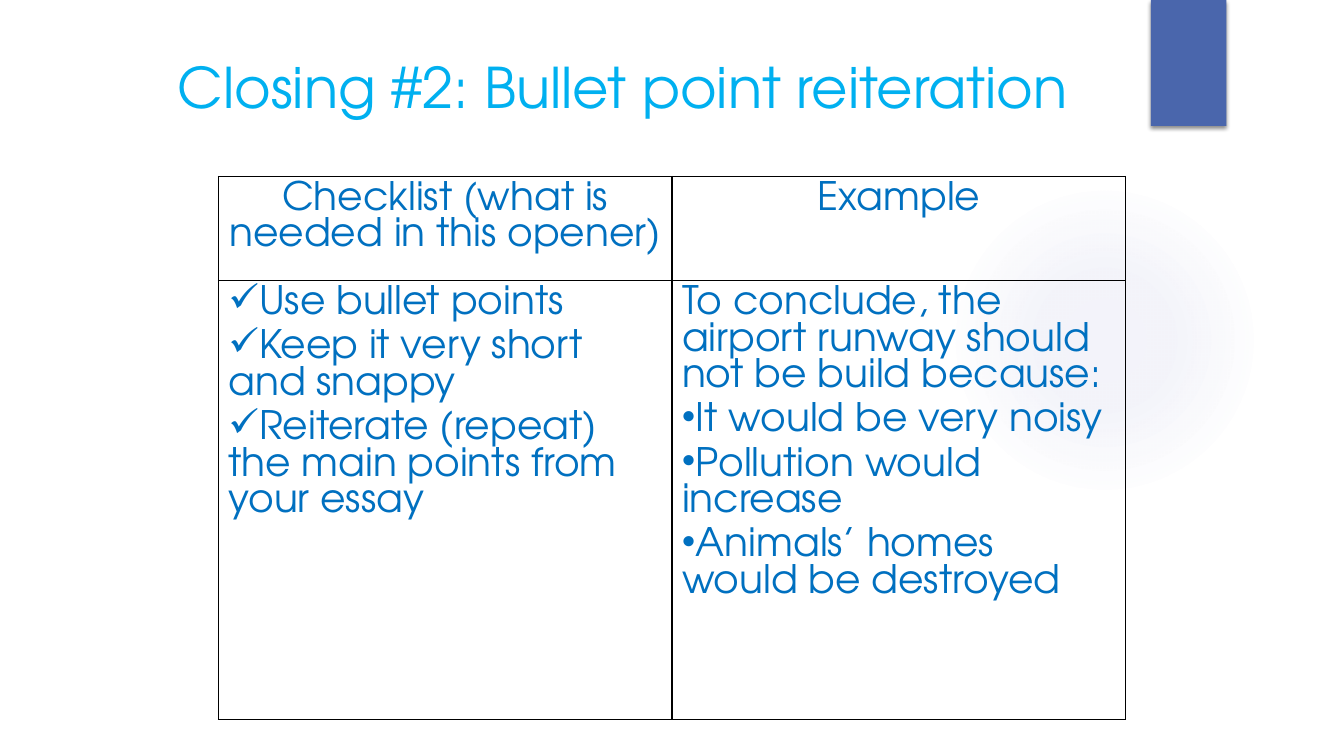
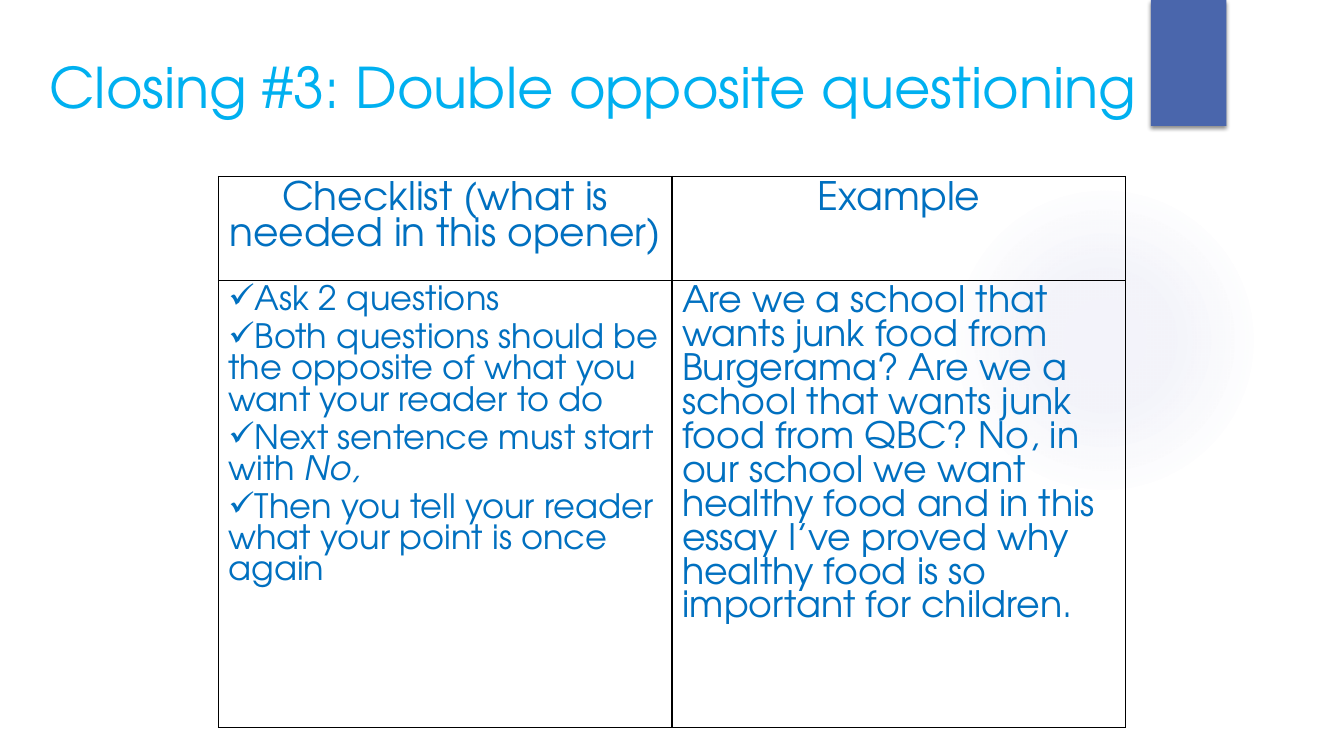
from dataclasses import dataclass
from typing import Any

from lxml import etree
from pptx import Presentation
from pptx.dml.color import RGBColor
from pptx.enum.shapes import MSO_SHAPE as Preset
from pptx.enum.text import MSO_ANCHOR as Anchor, PP_ALIGN as Align
from pptx.oxml import parse_xml
from pptx.oxml.ns import nsdecls, qn
from pptx.util import Emu, Inches, Pt

# Grid: 160 columns by 90 rows, one twelfth of an inch each
COLUMNS, ROWS = 160, 90
UNIT = Inches(1) / 12

# Shared look
FONT = "TeX Gyre Adventor"
SKY = RGBColor(0x00, 0xB0, 0xF0)
BLUE = RGBColor(0x00, 0x70, 0xC0)
TAB = RGBColor(0x4A, 0x66, 0xAC)
GLOW = RGBColor(0x5C, 0x64, 0xB7)
BLACK = RGBColor(0x00, 0x00, 0x00)
GLOW_STOPS = ((0, 7), (36, 6), (69, 0))  # position and opacity, per cent
TITLE_SIZE, TABLE_SIZE = 40, 28
TITLE_TOP, TITLE_HEIGHT, TITLE_INSET = 3.6, 15, 2.6
TABLE_LEFT, TABLE_TOP = 26, 21
TABLE_COLUMN, HEADER_ROW = 54, 12.4
HEADERS = ("Checklist (what is needed in this opener)", "Example")
CHECK, DOT = "✓", "•"


@dataclass(frozen=True)
class Item:
    text: str
    bullet: str = ""
    emphasis: str = ""
    size: int = TABLE_SIZE
    align: Align = Align.LEFT


@dataclass(frozen=True)
class Closing:
    title: str
    title_left: float
    title_width: float
    body_row: float
    checklist: tuple[Item, ...]
    example: tuple[Item, ...]


CLOSINGS = (
    Closing(
        "Closing #2: Bullet point reiteration", 20, 120, 52.2,
        (
            Item("Use bullet points", CHECK),
            Item("Keep it very short and snappy", CHECK),
            Item("Reiterate (repeat) the main points from your essay", CHECK),
        ),
        (
            Item("To conclude, the airport runway should not be build because:"),
            Item("It would be very noisy", DOT),
            Item("Pollution would increase", DOT),
            Item("Animals’ homes would be destroyed", DOT),
        ),
    ),
    Closing(
        "Closing #3: Double opposite questioning", 4.7, 133, 53.2,
        (
            Item("Ask 2 questions", CHECK, size=24),
            Item("Both questions should be the opposite of what you want "
                 "your reader to do", CHECK, size=24),
            Item("Next sentence must start with ", CHECK, "No,", 24),
            Item("Then you tell your reader what your point is once again",
                 CHECK, size=24),
        ),
        (
            Item("Are we a school that wants junk food from Burgerama? "
                 "Are we a school that wants junk food from QBC? No, in our "
                 "school we want healthy food and in this essay I’ve proved "
                 "why healthy food is so important for children.", size=26),
        ),
    ),
)


def grid(*units: float) -> list[Emu]:
    return [Emu(round(unit * UNIT)) for unit in units]


def set_format(target: Any, values: dict[str, Any]) -> None:
    for name, value in values.items():
        setattr(target, name, value)


def add_span(para: Any, text: str, size: int, color: RGBColor,
             italic: bool = False) -> None:
    span = para.add_run()
    span.text = text
    set_format(span.font, {"name": FONT, "size": Pt(size), "italic": italic})
    span.font.color.rgb = color


# Decoration behind every slide
def add_plain_shape(page: Any, preset: Preset, *place: float) -> Any:
    shape = page.shapes.add_shape(preset, *grid(*place))
    shape.shadow.inherit = False
    shape.line.fill.background()
    return shape


def add_decoration(page: Any) -> None:
    glow = add_plain_shape(page, Preset.OVAL, 113, 22, 37, 37)
    stops = "".join(
        f'<a:gs pos="{position * 1000}"><a:srgbClr val="{GLOW}">'
        f'<a:alpha val="{opacity * 1000}"/></a:srgbClr></a:gs>'
        for position, opacity in GLOW_STOPS)
    outline = glow._element.spPr.find(qn("a:ln"))
    outline.addprevious(parse_xml(
        f'<a:gradFill {nsdecls("a")} rotWithShape="1"><a:gsLst>{stops}</a:gsLst>'
        '<a:path path="circle"><a:fillToRect l="50000" t="50000" r="50000" '
        'b="50000"/></a:path></a:gradFill>'))

    tab = add_plain_shape(page, Preset.RECTANGLE, 137, 0, 9, 15)
    tab.fill.solid()
    tab.fill.fore_color.rgb = TAB
    effects = tab._element.spPr.find(qn("a:effectLst"))
    effects.append(parse_xml(
        f'<a:outerShdw {nsdecls("a")} blurRad="{Pt(3)}" dist="{Pt(2)}" '
        f'dir="5400000" rotWithShape="0"><a:srgbClr val="{BLACK}">'
        '<a:alpha val="45000"/></a:srgbClr></a:outerShdw>'))


def add_title(page: Any, closing: Closing) -> None:
    box = page.shapes.add_textbox(*grid(
        closing.title_left, TITLE_TOP, closing.title_width, TITLE_HEIGHT))
    set_format(box.text_frame, {
        "word_wrap": True,
        "vertical_anchor": Anchor.TOP,
        "margin_top": grid(TITLE_INSET)[0],
    })
    add_span(box.text_frame.paragraphs[0], closing.title, TITLE_SIZE, SKY)


# Table
def add_borders(cell: Any) -> None:
    properties = cell._tc.get_or_add_tcPr()
    for index, side in enumerate(("lnL", "lnR", "lnT", "lnB")):
        properties.insert(index, parse_xml(
            f'<a:{side} {nsdecls("a")} w="{Pt(1)}"><a:solidFill>'
            f'<a:srgbClr val="{BLACK}"/></a:solidFill></a:{side}>'))


def fill_cell(cell: Any, items: tuple[Item, ...]) -> None:
    cell.fill.background()
    add_borders(cell)
    frame = cell.text_frame
    for index, item in enumerate(items):
        para = frame.add_paragraph() if index else frame.paragraphs[0]
        space = Pt(item.size * 0.2) if index else Pt(0)
        set_format(para, {"alignment": item.align, "space_before": space})
        if item.bullet:
            mark = etree.SubElement(para._p.get_or_add_pPr(), qn("a:buChar"))
            mark.set("char", item.bullet)
        add_span(para, item.text, item.size, BLUE)
        if item.emphasis:
            add_span(para, item.emphasis, item.size, BLUE, italic=True)


def add_closing_table(page: Any, closing: Closing) -> None:
    heights = (HEADER_ROW, closing.body_row)
    table = page.shapes.add_table(2, 2, *grid(
        TABLE_LEFT, TABLE_TOP, 2 * TABLE_COLUMN, sum(heights))).table
    set_format(table, {"first_row": False, "horz_banding": False})
    for row, height in zip(table.rows, grid(*heights)):
        row.height = height
    headers = [(Item(text, align=Align.CENTER),) for text in HEADERS]
    contents = (*headers, closing.checklist, closing.example)
    for cell, items in zip(table.iter_cells(), contents):
        fill_cell(cell, items)


def main() -> None:
    deck = Presentation()
    deck.slide_width, deck.slide_height = grid(COLUMNS, ROWS)
    blank = deck.slide_layouts[6]
    for closing in CLOSINGS:
        page = deck.slides.add_slide(blank)
        add_decoration(page)
        add_title(page, closing)
        add_closing_table(page, closing)
    deck.save("out.pptx")


if __name__ == "__main__":
    main()
